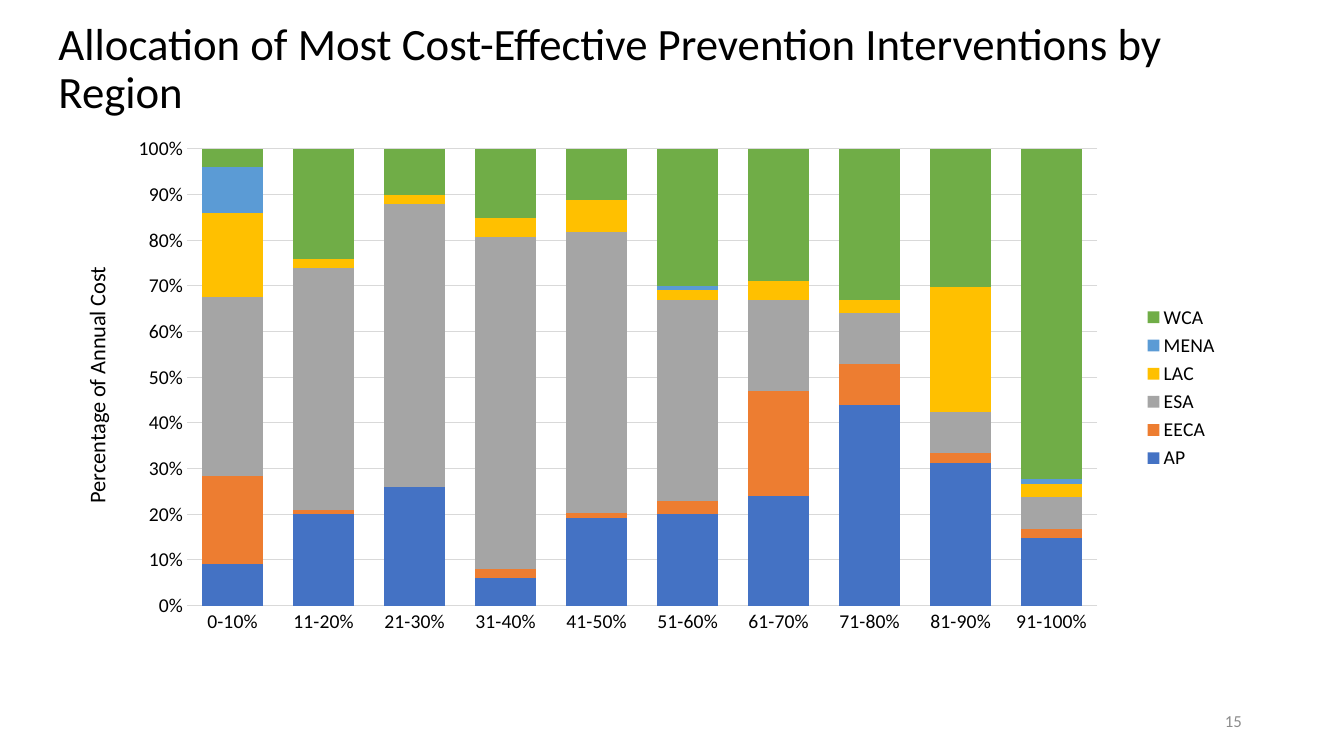
from dataclasses import dataclass

from lxml.etree import SubElement
from pptx import Presentation
from pptx.chart.data import CategoryChartData
from pptx.dml.color import RGBColor
from pptx.enum.chart import XL_CHART_TYPE, XL_LEGEND_POSITION, XL_TICK_MARK
from pptx.enum.text import MSO_ANCHOR, MSO_AUTO_SIZE, PP_ALIGN
from pptx.oxml.ns import qn
from pptx.util import Cm, Pt


@dataclass(frozen=True)
class Theme:
    font: str = "Calibri"
    text: str = "000000"
    muted: str = "8C8C8C"
    grid: str = "D9D9D9"
    title_size: int = 32
    axis_title_size: int = 16
    label_size: int = 14
    number_size: int = 12
    hairline: float = 0.75


THEME = Theme()
BANDS = ["0-10%"] + [f"{10 * i + 1}-{10 * i + 10}%" for i in range(1, 10)]
REGIONS = [
    ("AP", "4472C4", (9, 20, 26, 6, 19, 20, 24, 44, 31, 15)),
    ("EECA", "ED7D31", (19, 1, 0, 2, 1, 3, 23, 9, 2, 2)),
    ("ESA", "A5A5A5", (39, 53, 62, 72, 61, 44, 20, 11, 9, 7)),
    ("LAC", "FFC000", (18, 2, 2, 4, 7, 2, 4, 3, 27, 3)),
    ("MENA", "5B9BD5", (10, 0, 0, 0, 0, 1, 0, 0, 0, 1)),
    ("WCA", "70AD47", (4, 24, 10, 15, 11, 30, 29, 33, 30, 73)),
]


def style_font(font, size, color=THEME.text):
    font.name = THEME.font
    font.size = Pt(size)
    font.bold = False
    font.color.rgb = RGBColor.from_string(color)


def style_line(line):
    line.width = Pt(THEME.hairline)
    line.color.rgb = RGBColor.from_string(THEME.grid)


def write_text(frame, text, size, color, align):
    frame.word_wrap = True
    frame.auto_size = MSO_AUTO_SIZE.NONE
    frame.vertical_anchor = MSO_ANCHOR.MIDDLE
    paragraph = frame.paragraphs[0]
    paragraph.alignment = align
    run = paragraph.add_run()
    run.text = text
    style_font(run.font, size, color)
    return paragraph


def place_heading(slide, left, top, width, height):
    heading = slide.shapes.title
    heading.left, heading.top = left, top
    heading.width, heading.height = width, height
    paragraph = write_text(
        heading.text_frame,
        "Allocation of Most Cost-Effective Prevention Interventions by Region",
        THEME.title_size, THEME.text, PP_ALIGN.LEFT)
    paragraph.line_spacing = 0.9


def fix_plot_area(chart, x, y, w, h):
    plot_area = chart._chartSpace.find(".//" + qn("c:plotArea"))
    for old_layout in plot_area.findall(qn("c:layout")):
        plot_area.remove(old_layout)
    layout = SubElement(plot_area, qn("c:layout"))
    plot_area.insert(0, layout)
    manual = SubElement(layout, qn("c:manualLayout"))
    settings = [("layoutTarget", "inner"), ("xMode", "edge"), ("yMode", "edge"),
                ("x", x), ("y", y), ("w", w), ("h", h)]
    for tag, value in settings:
        SubElement(manual, qn("c:" + tag)).set("val", str(value))


def format_cost_axis(cost_axis):
    cost_axis.minimum_scale = 0
    cost_axis.maximum_scale = 1
    cost_axis.major_unit = 0.1
    cost_axis.format.line.fill.background()
    cost_axis.has_major_gridlines = True
    style_line(cost_axis.major_gridlines.format.line)
    cost_axis.tick_labels.number_format = "0%"
    cost_axis.tick_labels.number_format_is_linked = False
    caption = cost_axis.axis_title.text_frame
    caption._txBody.bodyPr.set("rot", "-5400000")
    caption._txBody.bodyPr.set("vert", "horz")
    run = caption.paragraphs[0].add_run()
    run.text = "Percentage of Annual Cost"
    style_font(run.font, THEME.axis_title_size)


def place_cost_chart(slide, left, top, width, height):
    costs = CategoryChartData(number_format="0")
    costs.categories = BANDS
    for region, _, shares in REGIONS:
        costs.add_series(region, shares)
    chart = slide.shapes.add_chart(
        XL_CHART_TYPE.COLUMN_STACKED_100, left, top, width, height, costs).chart
    style_font(chart.font, THEME.label_size)
    chart.has_title = False
    chart.has_legend = True
    chart.legend.position = XL_LEGEND_POSITION.RIGHT
    chart.legend.include_in_layout = False
    style_font(chart.legend.font, THEME.label_size)

    columns = chart.plots[0]
    columns.gap_width = 50
    columns.overlap = 100
    columns.vary_by_categories = False
    for series, (_, color, _) in zip(columns.series, REGIONS):
        series.format.fill.solid()
        series.format.fill.fore_color.rgb = RGBColor.from_string(color)
        series.format.line.fill.background()

    for axis in (chart.category_axis, chart.value_axis):
        axis.major_tick_mark = axis.minor_tick_mark = XL_TICK_MARK.NONE
        style_font(axis.tick_labels.font, THEME.label_size)
    style_line(chart.category_axis.format.line)
    format_cost_axis(chart.value_axis)
    fix_plot_area(chart, 0.095, 0.04, 0.79, 0.88)


def place_page_number(slide, left, top, width, height):
    page_number = slide.shapes.add_textbox(left, top, width, height)
    write_text(page_number.text_frame, "15", THEME.number_size, THEME.muted, PP_ALIGN.RIGHT)


def main():
    deck = Presentation()
    deck.slide_width, deck.slide_height = Cm(33.87), Cm(19.05)
    slide = deck.slides.add_slide(deck.slide_layouts.get_by_name("Title Only"))
    place_heading(slide, Cm(1.22), Cm(0.79), Cm(31.55), Cm(1.96))
    place_cost_chart(slide, Cm(1.96), Cm(3.23), Cm(29.03), Cm(13.08))
    place_page_number(slide, Cm(23.93), Cm(17.65), Cm(7.62), Cm(1.02))
    deck.save("out.pptx")


if __name__ == "__main__":
    main()
